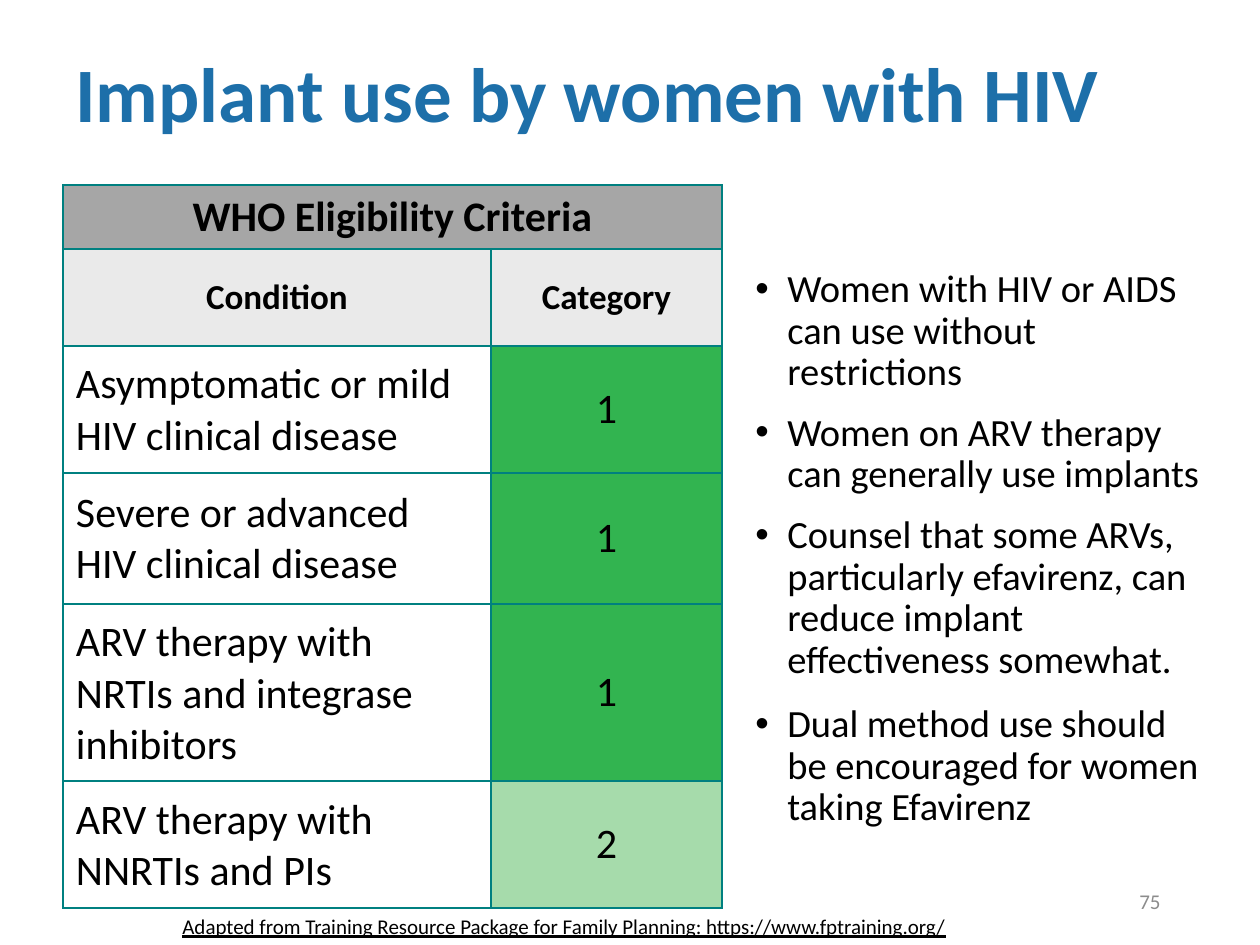
"""Build the slide on implant use by women with HIV."""
from lxml import etree
from pptx import Presentation
from pptx.dml.color import RGBColor
from pptx.enum.text import MSO_ANCHOR, PP_ALIGN
from pptx.oxml.ns import qn
from pptx.util import Pt

LEFT, MID, RIGHT = PP_ALIGN.LEFT, PP_ALIGN.CENTER, PP_ALIGN.RIGHT
TOP, MIDDLE = MSO_ANCHOR.TOP, MSO_ANCHOR.MIDDLE
SCALE = 914400 / 126
COLORS = {"title": "1D6FA9", "text": "000000", "page": "8C8C8C", "line": "008080",
          "head": "A6A6A6", "sub": "EAEAEA", "white": "FFFFFF",
          "1": "32B450", "2": "A6DBAB"}


def px(n):
    return round(n * SCALE)


def style(para, size, color="text", bold=False, align=LEFT):
    para.alignment = align
    for run in para.runs:
        font = run.font
        font.name, font.size, font.bold = "Calibri", Pt(size), bold
        font.color.rgb = RGBColor.from_string(COLORS[color])


prs = Presentation()
prs.slide_width, prs.slide_height = px(1260), px(945)
slide = prs.slides.add_slide(prs.slide_layouts[6])
shapes = slide.shapes

labels = [
    ((63, 31, 1134, 122), "Implant use by women with HIV", 44, "title", True, LEFT, MIDDLE),
    ((890, 876, 283, 50), "75", 12, "page", False, RIGHT, MIDDLE),
    ((170, 907, 874, 34), "Adapted from Training Resource Package for Family Planning: "
     "https://www.fptraining.org/", 12, "text", False, LEFT, TOP),
]
for area, text, size, color, bold, align, anchor in labels:
    frame = shapes.add_textbox(*map(px, area)).text_frame
    frame.word_wrap = True
    frame.vertical_anchor = anchor
    frame.text = text
    style(frame.paragraphs[0], size, color, bold, align)
frame.paragraphs[0].runs[0].font.underline = True

points = [
    ("Women with HIV or AIDS can use without restrictions", 0),
    ("Women on ARV therapy can generally use implants", 11),
    ("Counsel that some ARVs, particularly efavirenz, can reduce implant "
     "effectiveness somewhat.", 11),
    ("Dual method use should be encouraged for women taking Efavirenz", 13),
]
body = shapes.add_textbox(px(743), px(263), px(480), px(621)).text_frame
body.word_wrap = True
body.text = "\n".join(text for text, gap in points)
for para, (text, gap) in zip(body.paragraphs, points):
    style(para, 22)
    para.line_spacing = 0.9
    para.space_before = Pt(gap)
    props = para._p.get_or_add_pPr()
    props.set("marL", str(px(32)))
    props.set("indent", str(-px(32)))
    etree.SubElement(props, qn("a:buFont"), typeface="Arial")
    etree.SubElement(props, qn("a:buChar"), char="•")

rows = [
    (64, "WHO Eligibility Criteria", ""),
    (97, "Condition", "Category"),
    (127, "Asymptomatic or mild HIV clinical disease", "1"),
    (131, "Severe or advanced HIV clinical disease", "1"),
    (177, "ARV therapy with NRTIs and integrase inhibitors", "1"),
    (127, "ARV therapy with NNRTIs and PIs", "2"),
]
high = sum(row[0] for row in rows)
table = shapes.add_table(len(rows), 2, px(63), px(185), px(659), px(high)).table
for col, width in zip(table.columns, (428, 231)):
    col.width = px(width)
table.cell(0, 0).merge(table.cell(0, 1))
for r, (height, *texts) in enumerate(rows):
    table.rows[r].height = px(height)
    head = r < 2
    for c, text in enumerate(texts):
        cell = table.cell(r, c)
        cell.text_frame.text = text
        style(cell.text_frame.paragraphs[0], 20 if r == 1 else 24, bold=head,
              align=MID if head or c else LEFT)
        cell.vertical_anchor = MIDDLE
        cell.margin_left = cell.margin_right = px(13)
        cell.margin_top = cell.margin_bottom = px(6 if head else 13)
        fill = ("head", "sub")[r] if head else text if c else "white"
        cell.fill.solid()
        cell.fill.fore_color.rgb = RGBColor.from_string(COLORS[fill])
        props = cell._tc.get_or_add_tcPr()
        for i, side in enumerate("LRTB"):
            line = etree.Element(qn("a:ln" + side), w=str(Pt(1)))
            paint = etree.SubElement(line, qn("a:solidFill"))
            etree.SubElement(paint, qn("a:srgbClr"), val=COLORS["line"])
            props.insert(i, line)

prs.save("out.pptx")
